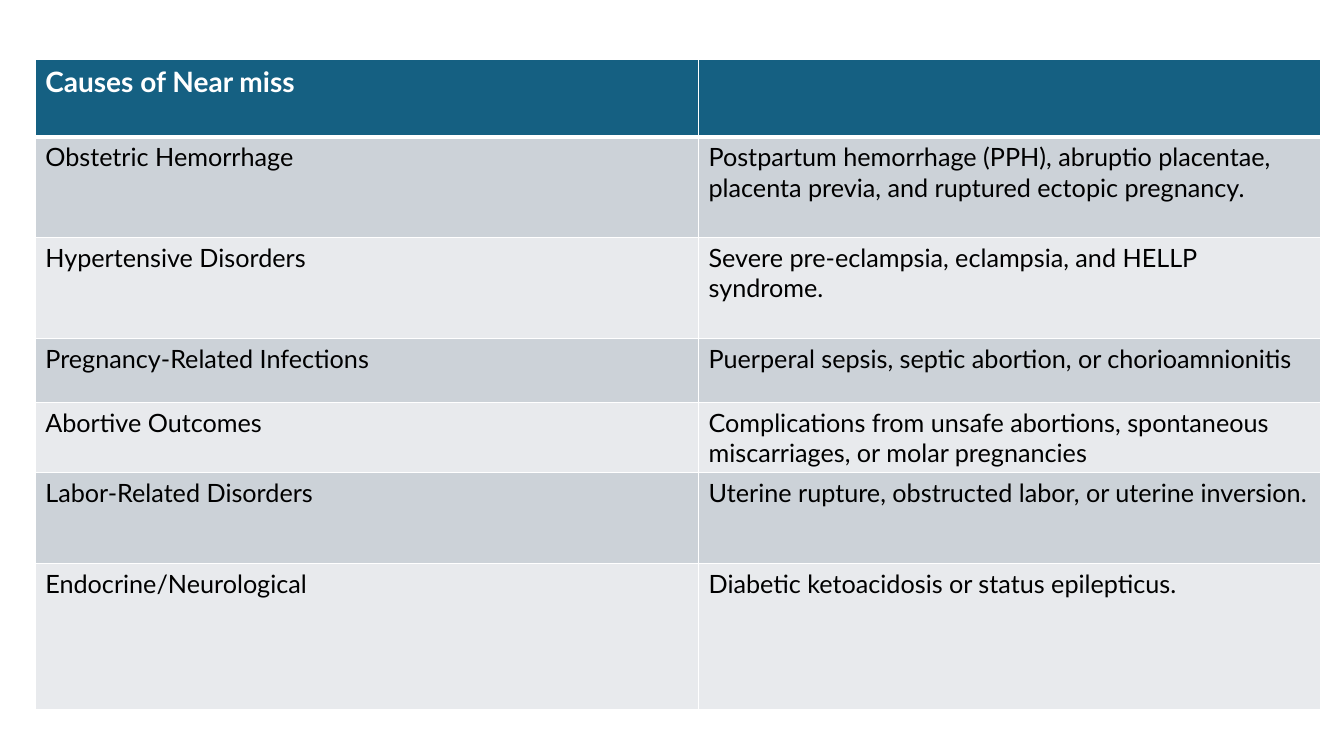
from lxml import etree
from pptx import Presentation
from pptx.dml.color import RGBColor
from pptx.oxml.ns import qn
from pptx.util import Pt

WHITE = RGBColor(0xFF, 0xFF, 0xFF)
BLACK = RGBColor(0, 0, 0)
TEAL = RGBColor(0x15, 0x60, 0x82)
GREY = RGBColor(0xCC, 0xD2, 0xD8)
PALE = RGBColor(0xE8, 0xEA, 0xED)

WIDTHS = (473.76, 444.24)
CAUSES = [
    (55.4, "Causes of Near miss", ""),
    (72, "Obstetric Hemorrhage",
     "Postpartum hemorrhage (PPH), abruptio placentae, placenta previa, "
     "and ruptured ectopic pregnancy."),
    (72, "Hypertensive Disorders",
     "Severe pre-eclampsia, eclampsia, and HELLP syndrome."),
    (45.4, "Pregnancy-Related Infections",
     "Puerperal sepsis, septic abortion, or chorioamnionitis"),
    (50.4, "Abortive Outcomes",
     "Complications from unsafe abortions, spontaneous miscarriages, "
     "or molar pregnancies"),
    (64.8, "Labor-Related Disorders",
     "Uterine rupture, obstructed labor, or uterine inversion."),
    (104.4, "Endocrine/Neurological",
     "Diabetic ketoacidosis or status epilepticus."),
]


def write(frame, text, size=18, color=BLACK, bold=False):
    """Put formatted text in a frame."""
    para = frame.paragraphs[0]
    if text:
        run = para.add_run()
        run.text = text
        font = run.font
    else:
        font = para.font
    font.name = "Lato"
    font.size = Pt(size)
    font.bold = bold
    font.color.rgb = color


def edge(cell, **widths):
    """Draw white borders, given as side=width in points."""
    props = cell._tc.get_or_add_tcPr()
    for side, width in widths.items():
        line = etree.SubElement(props, qn(f"a:ln{side}"), w=str(Pt(width)))
        fill = etree.SubElement(line, qn("a:solidFill"))
        etree.SubElement(fill, qn("a:srgbClr"), val=str(WHITE))


def draw_table(slide, left, top, width, height):
    """Place the table of causes in the given box."""
    frame = slide.shapes.add_table(
        len(CAUSES), len(WIDTHS), Pt(left), Pt(top), Pt(width), Pt(height))
    table = frame.table
    for column, size in zip(table.columns, WIDTHS):
        column.width = Pt(size)
    for row, (tall, *texts) in enumerate(CAUSES):
        table.rows[row].height = Pt(tall)
        head = row == 0
        shade = TEAL if head else GREY if row % 2 else PALE
        style = {"size": 20, "color": WHITE, "bold": True} if head else {}
        for col, text in enumerate(texts):
            cell = table.cell(row, col)
            edge(cell, L=1, R=1, T=3 if row == 1 else 1, B=3 if head else 1)
            cell.fill.solid()
            cell.fill.fore_color.rgb = shade
            write(cell.text_frame, text, **style)


def main():
    """Build and save the slide."""
    deck = Presentation()
    deck.slide_width, deck.slide_height = Pt(960), Pt(540)
    slide = deck.slides.add_slide(deck.slide_layouts[6])
    draw_table(slide, 25.2, 42.5, sum(WIDTHS), sum(row[0] for row in CAUSES))
    deck.save("out.pptx")


if __name__ == "__main__":
    main()
